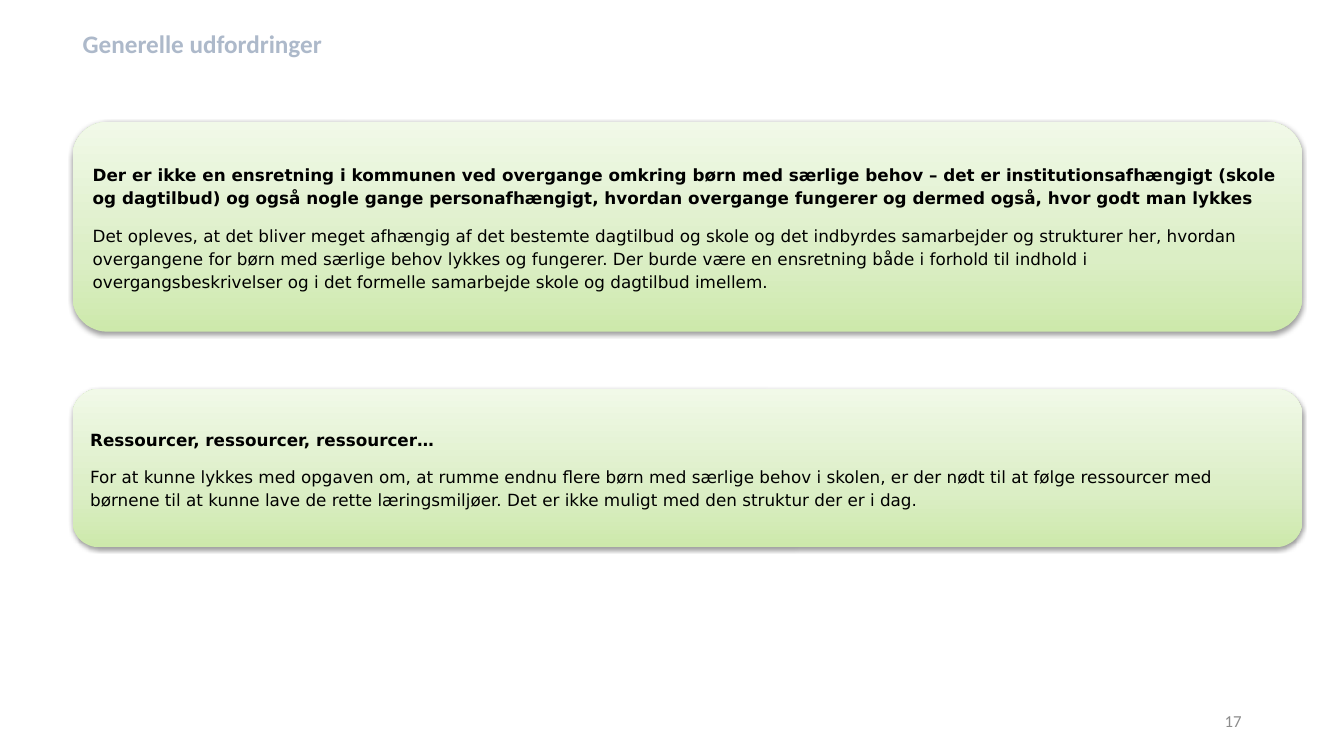
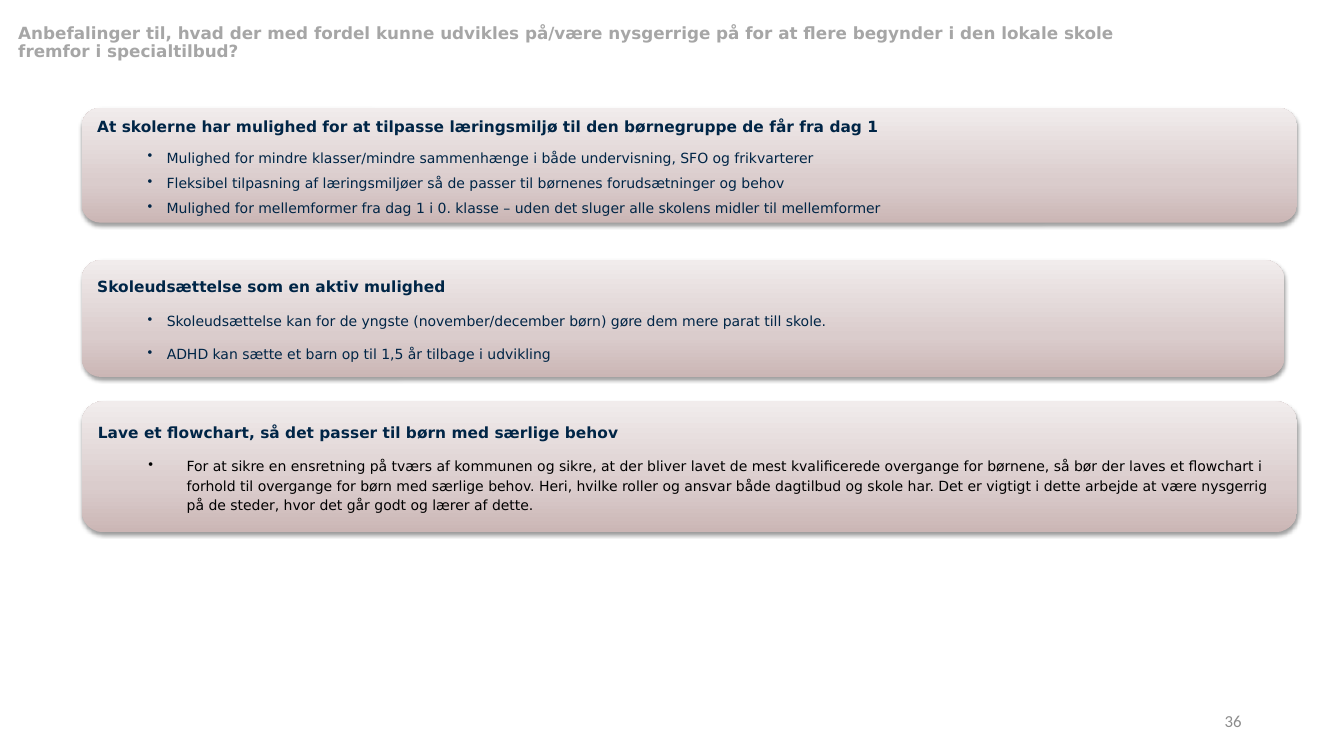
import lxml.etree
import pptx
import pptx.dml.color
import pptx.enum.shapes
import pptx.enum.text
import pptx.oxml.ns
import pptx.util

Pt = pptx.util.Pt
qn = pptx.oxml.ns.qn
ALIGN = pptx.enum.text.PP_ALIGN
ANCHOR = pptx.enum.text.MSO_ANCHOR

GREEN = [(0, "CDE9AB"), (35, "DBEEC5"), (100, "F1F9E8")]
ROSE = [(0, "CBB6B5"), (35, "DACCCC"), (100, "F1ECEC")]
BLACK, NAVY = "000000", "002546"
BODY_FONT, PLAIN_FONT = "DejaVu Sans", "Calibri"
NUMBER_BOX = (678, 500.4, 216, 28.8)

LOOSE = {"line_spacing": 1.15, "space_after": Pt(10)}
TIGHT = {"space_after": Pt(6)}
HEADING_12 = {"size": Pt(12), "name": BODY_FONT, "bold": True}
BODY_12 = {**HEADING_12, "bold": False}
HEADING_11 = {**HEADING_12, "size": Pt(11)}
BODY_10 = {**BODY_12, "size": Pt(10)}
NUMBER = {"size": Pt(12), "name": PLAIN_FONT, "bold": False}

CHALLENGES = [
    ((51.84, 87.1, 878.4, 149.8),
     "Der er ikke en ensretning i kommunen ved overgange omkring børn med særlige behov – "
     "det er institutionsafhængigt (skole og dagtilbud) og også nogle gange personafhængigt, "
     "hvordan overgange fungerer og dermed også, hvor godt man lykkes",
     "Det opleves, at det bliver meget afhængig af det bestemte dagtilbud og skole og det "
     "indbyrdes samarbejder og strukturer her, hvordan overgangene for børn med særlige behov "
     "lykkes og fungerer. Der burde være en ensretning både i forhold til indhold i "
     "overgangsbeskrivelser og i det formelle samarbejde skole og dagtilbud imellem."),
    ((51.84, 277.9, 878.4, 113),
     "Ressourcer, ressourcer, ressourcer…",
     "For at kunne lykkes med opgaven om, at rumme endnu flere børn med særlige behov i skolen, "
     "er der nødt til at følge ressourcer med børnene til at kunne lave de rette læringsmiljøer. "
     "Det er ikke muligt med den struktur der er i dag."),
]

RECOMMENDATIONS = [
    ((58.3, 77, 868.3, 82.1),
     "At skolerne har mulighed for at tilpasse læringsmiljø til den børnegruppe de får fra dag 1",
     ["Mulighed for mindre klasser/mindre sammenhænge i både undervisning, SFO og frikvarterer",
      "Fleksibel tilpasning af læringsmiljøer så de passer til børnenes forudsætninger og behov",
      "Mulighed for mellemformer fra dag 1 i 0. klasse – uden det sluger alle skolens midler "
      "til mellemformer"],
     TIGHT, NAVY, (49.7, 13.7)),
    ((58.3, 185.8, 859, 83.5),
     "Skoleudsættelse som en aktiv mulighed",
     ["Skoleudsættelse kan for de yngste (november/december børn) gøre dem mere parat till skole.",
      "ADHD kan sætte et barn op til 1,5 år tilbage i udvikling"],
     LOOSE, NAVY, (49.7, 13.7)),
    ((58.3, 286.6, 868.3, 93.6),
     "Lave et flowchart, så det passer til børn med særlige behov",
     ["For at sikre en ensretning på tværs af kommunen og sikre, at der bliver lavet de mest "
      "kvalificerede overgange for børnene, så bør der laves et flowchart i forhold til overgange "
      "for børn med særlige behov. Heri, hvilke roller og ansvar både dagtilbud og skole har. "
      "Det er vigtigt i dette arbejde at være nysgerrig på de steder, hvor det går godt og lærer "
      "af dette."],
     LOOSE, BLACK, (63.4, 27.4)),
]


def rgb(code):
    """Turn a hex string into a colour."""
    return pptx.dml.color.RGBColor.from_string(code)


def apply(target, values):
    """Set each named attribute on the target."""
    for name, value in values.items():
        setattr(target, name, value)


def add_node(parent, tag, **attributes):
    """Append a DrawingML element with the given attributes."""
    node = lxml.etree.SubElement(parent, qn(tag))
    for name, value in attributes.items():
        node.set(name, str(value))
    return node


def write(frame, text, font, color, layout, first=False):
    """Write one paragraph into a text frame."""
    paragraph = frame.paragraphs[0] if first else frame.add_paragraph()
    apply(paragraph, {"alignment": ALIGN.LEFT, **layout})
    run = paragraph.add_run()
    run.text = text
    apply(run.font, font)
    run.font.color.rgb = rgb(color)
    return paragraph


def add_bullet(paragraph, indent):
    """Give a paragraph a hanging bullet."""
    left, hanging = indent
    properties = paragraph._p.get_or_add_pPr()
    properties.set("marL", str(Pt(left)))
    properties.set("indent", str(-Pt(hanging)))
    add_node(properties, "a:buChar", char="•")


def add_card(slide, box, stops, heading, font, color):
    """Draw a shaded rounded card with its heading and return its text frame."""
    card = slide.shapes.add_shape(
        pptx.enum.shapes.MSO_SHAPE.ROUNDED_RECTANGLE, *map(Pt, box))
    card.line.fill.background()
    card.fill.gradient()
    card.fill.gradient_angle = 90
    properties = card._element.spPr
    stop_list = properties.find(".//" + qn("a:gsLst"))
    for stop in list(stop_list):
        stop_list.remove(stop)
    for position, code in stops:
        add_node(add_node(stop_list, "a:gs", pos=position * 1000), "a:srgbClr", val=code)
    card.shadow.inherit = False
    shadow = add_node(properties.find(qn("a:effectLst")), "a:outerShdw", blurRad=Pt(3.1),
                      dist=Pt(1.6), dir=5400000, rotWithShape=0)
    add_node(add_node(shadow, "a:srgbClr", val=BLACK), "a:alpha", val=38000)
    frame = card.text_frame
    apply(frame, {"word_wrap": True, "vertical_anchor": ANCHOR.MIDDLE})
    write(frame, heading, font, color, LOOSE, first=True)
    return frame


def add_title(slide, box, text, font, color, anchor, spacing, wrap):
    """Place and format the slide title."""
    title = slide.shapes.title
    apply(title, dict(zip(("left", "top", "width", "height"), map(Pt, box))))
    apply(title.text_frame, {"word_wrap": wrap, "vertical_anchor": anchor,
                             "auto_size": pptx.enum.text.MSO_AUTO_SIZE.NONE})
    write(title.text_frame, text, font, color,
          {"line_spacing": spacing, "space_before": Pt(0)}, first=True)


def add_number(slide, box, number):
    """Write the slide number at the foot."""
    frame = slide.shapes.add_textbox(*map(Pt, box)).text_frame
    apply(frame, {"word_wrap": True, "vertical_anchor": ANCHOR.MIDDLE})
    write(frame, number, NUMBER, "8C8C8C", {"alignment": ALIGN.RIGHT}, first=True)


def build_challenges(slide):
    """Build the slide of general challenges."""
    add_title(slide, (51.84, 16.6, 190.8, 28.8), "Generelle udfordringer",
              {"size": Pt(18), "name": PLAIN_FONT, "bold": True}, "ADB9CA",
              ANCHOR.TOP, 1.0, False)
    for box, heading, explanation in CHALLENGES:
        frame = add_card(slide, box, GREEN, heading, HEADING_12, BLACK)
        write(frame, explanation, BODY_12, BLACK, LOOSE)
    add_number(slide, NUMBER_BOX, "17")


def build_recommendations(slide):
    """Build the slide of recommendations."""
    add_title(slide, (5.8, 2.9, 828, 56.2),
              "Anbefalinger til, hvad der med fordel kunne udvikles på/være nysgerrige på for at "
              "flere begynder i den lokale skole fremfor i specialtilbud?",
              HEADING_12, "A6A6A6", ANCHOR.MIDDLE, 0.9, True)
    for box, heading, proposals, layout, color, indent in RECOMMENDATIONS:
        frame = add_card(slide, box, ROSE, heading, HEADING_11, NAVY)
        for proposal in proposals:
            paragraph = write(frame, proposal, BODY_10, color, {"level": 1, **layout})
            add_bullet(paragraph, indent)
    add_number(slide, NUMBER_BOX, "36")


def main():
    """Build and save the presentation."""
    deck = pptx.Presentation()
    apply(deck, {"slide_width": Pt(960), "slide_height": Pt(540)})
    for build in (build_challenges, build_recommendations):
        build(deck.slides.add_slide(deck.slide_layouts[5]))
    deck.save("out.pptx")


if __name__ == "__main__":
    main()
